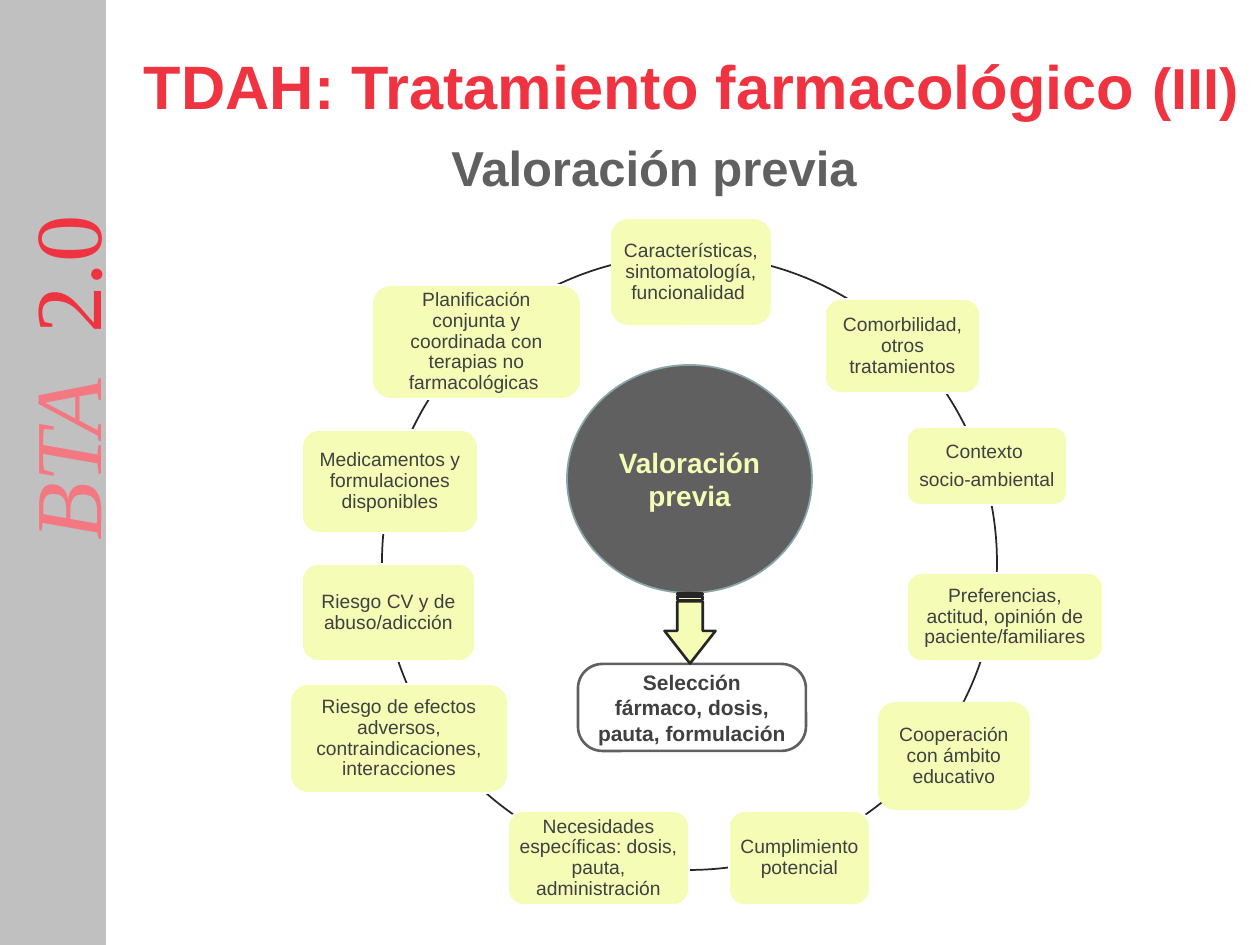
from pptx import Presentation
from pptx.dml.color import RGBColor as RGB
from pptx.enum.shapes import MSO_SHAPE as Kind
from pptx.enum.text import MSO_ANCHOR as Anchor, PP_ALIGN as Align
from pptx.util import Emu, Pt

SCALE = 914400 / 126

RED = RGB(0xEF, 0x33, 0x40)
ROSE = RGB(0xF4, 0x78, 0x81)
GRAY = RGB(0xC0, 0xC0, 0xC0)
SLATE = RGB(0x60, 0x60, 0x60)
INK = RGB(0x40, 0x40, 0x40)
DARK = RGB(0x26, 0x26, 0x26)
LIME = RGB(0xF4, 0xFC, 0xB6)
TEAL = RGB(0x8A, 0xA6, 0xA8)
WHITE = RGB(0xFF, 0xFF, 0xFF)

HEAD = dict(name="Arial", size=Pt(35), bold=True, color=RED)
TAIL = HEAD | dict(size=Pt(33))
SUB = dict(name="Arial", size=Pt(28), bold=True, color=SLATE)
SIDE = dict(name="Times New Roman", size=Pt(54), italic=True, color=ROSE)
NUM = SIDE | dict(italic=False, color=RED)
NOTE = dict(name="Arial", size=Pt(11), color=INK)
CORE = dict(name="Arial", size=Pt(16), bold=True, color=LIME)
PICK = dict(name="Arial", size=Pt(12), bold=True, color=INK)

TITLE = [("TDAH: Tratamiento farmacológico ", HEAD), ("(III)", TAIL)]
BRAND = [("BTA  ", SIDE), ("2.0", NUM)]

FACTORS = [
    ((611, 219, 160, 106), None, ["Características, sintomatología, funcionalidad "]),
    ((825, 299, 155, 94), WHITE, ["Comorbilidad, otros tratamientos"]),
    ((907, 427, 160, 78), WHITE, ["Contexto ", "socio-ambiental"]),
    ((907, 573, 196, 88), WHITE, ["Preferencias, actitud, opinión de paciente/familiares"]),
    ((878, 702, 152, 108), None, ["Cooperación con ámbito educativo"]),
    ((729, 811, 141, 94), WHITE, ["Cumplimiento potencial"]),
    ((508, 811, 181, 94), WHITE, ["Necesidades específicas: dosis, pauta, administración"]),
    ((290, 684, 218, 109), WHITE, ["Riesgo de efectos adversos, contraindicaciones, interacciones"]),
    ((302, 564, 173, 97), WHITE, ["Riesgo CV y de abuso/adicción"]),
    ((302, 430, 176, 103), WHITE, ["Medicamentos y formulaciones disponibles"]),
    ((372, 285, 209, 114), WHITE, ["Planificación conjunta y coordinada con terapias no farmacológicas "]),
]


def px(n):
    return Emu(round(n * SCALE))


def apply(item, form):
    for key, val in form.items():
        setattr(item, key, val)


def write(frame, lines, align=Align.CENTER, gap=0, **form):
    apply(frame, dict(word_wrap=True, vertical_anchor=Anchor.MIDDLE) | form)
    for i, runs in enumerate(lines):
        para = frame.add_paragraph() if i else frame.paragraphs[0]
        para.alignment = align
        if gap:
            para.line_spacing = 0.9
        if i:
            para.space_before = Pt(gap)
        for text, look in runs:
            run = para.add_run()
            run.text = text
            for key, val in look.items():
                if key == "color":
                    run.font.color.rgb = val
                else:
                    setattr(run.font, key, val)


def draw(kind, box, fill=None, line=None, width=1, adj=()):
    shape = slide.shapes.add_shape(kind, *map(px, box))
    shape.shadow.inherit = False
    for part, tone in ((shape.fill, fill), (shape.line.fill, line)):
        if tone is None:
            part.background()
        else:
            part.solid()
            part.fore_color.rgb = tone
    if line is not None:
        shape.line.width = Pt(width)
    for i, val in enumerate(adj):
        shape.adjustments[i] = val
    return shape


def label(box, lines, **form):
    shape = slide.shapes.add_textbox(*map(px, box))
    write(shape.text_frame, lines, Align.LEFT, vertical_anchor=Anchor.TOP, **form)
    return shape


deck = Presentation()
deck.slide_width, deck.slide_height = px(1260), px(945)
slide = deck.slides.add_slide(deck.slide_layouts[5])

draw(Kind.RECTANGLE, (0, 0, 105, 945), GRAY, GRAY, 0.75)
label((-140, 286, 407, 126), [BRAND]).rotation = 270
draw(Kind.FLOWCHART_CONNECTOR, (382, 255, 615, 615), line=DARK)

title = slide.shapes.title
apply(title, dict(zip(("left", "top", "width", "height"), map(px, (123, 35, 1137, 100)))))
write(title.text_frame, [TITLE])
label((439, 131, 450, 72), [[("Valoración previa", SUB)]], word_wrap=False)

pad = {f"margin_{side}": px(6) for side in ("left", "right", "top", "bottom")}
for box, edge, lines in FACTORS:
    card = draw(Kind.ROUNDED_RECTANGLE, box, LIME, edge)
    write(card.text_frame, [[(text, NOTE)] for text in lines], gap=4, **pad)

hub = draw(Kind.OVAL, (567, 365, 245, 228), SLATE, TEAL)
write(hub.text_frame, [[("Valoración previa", CORE)]])
goal = draw(Kind.ROUNDED_RECTANGLE, (578, 664, 228, 87), None, SLATE, 1.5, [0.28])
write(goal.text_frame, [[("Selección fármaco, dosis, pauta, formulación", PICK)]])
arrow = draw(Kind.STRIPED_RIGHT_ARROW, (655, 603, 70, 51), LIME, DARK, 1.5, [0.5, 0.64])
arrow.rotation = 90

deck.save("out.pptx")
